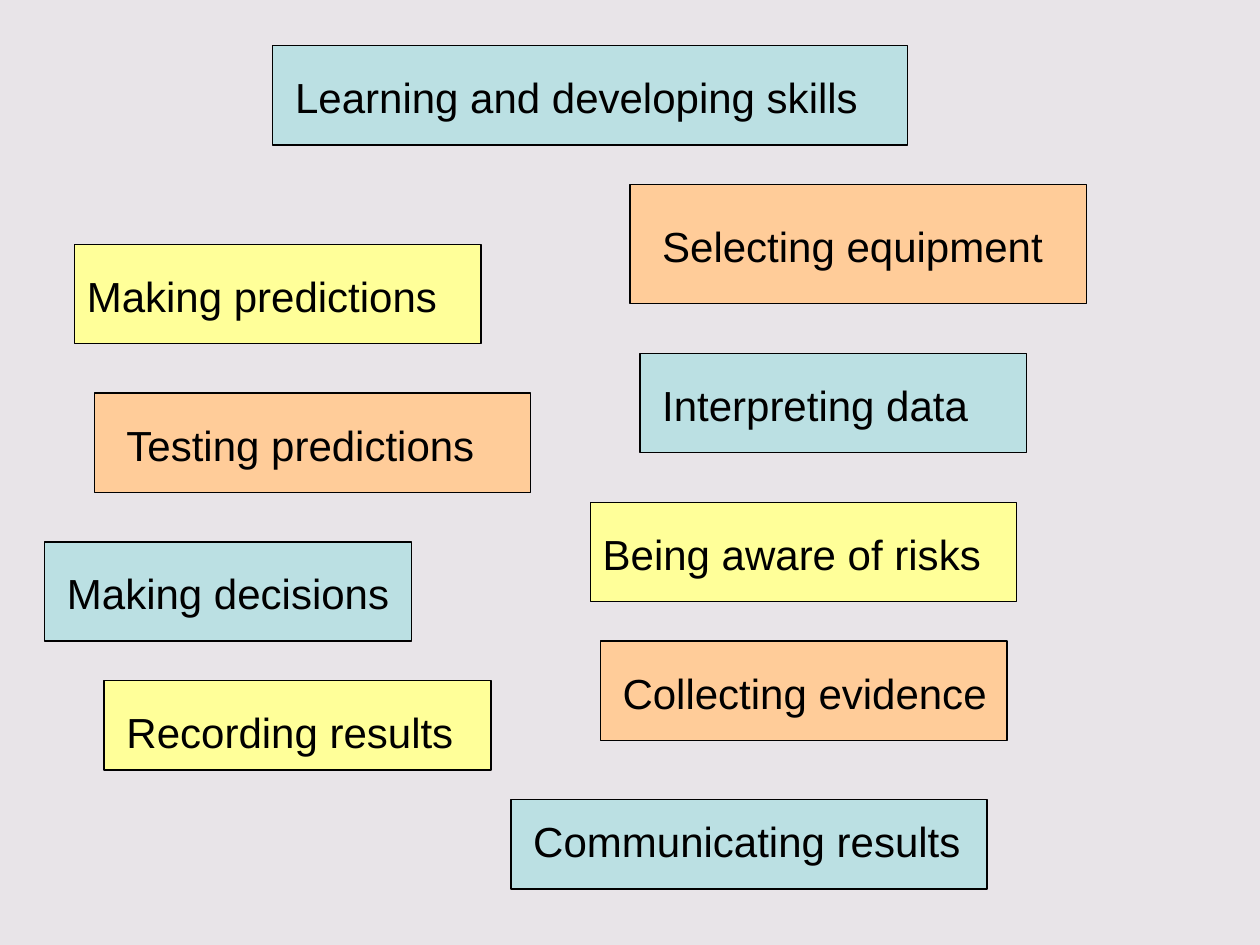
from pptx import Presentation
from pptx import util as u
from pptx.dml.color import RGBColor
from pptx.enum import shapes, text
from pptx.oxml.ns import qn
from lxml import etree


def rgb(h):
    return RGBColor.from_string(h)


prs = Presentation()
prs.slide_width, prs.slide_height = u.Inches(10), u.Inches(7.5)
s = prs.slides.add_slide(prs.slide_layouts[6])
s.background.fill.solid()
s.background.fill.fore_color.rgb = rgb("E8E4E8")

# Grid of 127 columns with square cells, offset by a small margin
CELL = prs.slide_width / 127
LEFT, TOP = u.Mm(1), u.Mm(1.25)
LABEL_ROWS = 6.35


def place(col, row, cols, rows):
    return [round(v) for v in (LEFT + col * CELL, TOP + row * CELL, cols * CELL, rows * CELL)]


YELLOW, ORANGE, BLUE = "FFFF99", "FFCC99", "BBE0E3"

# Label, fill, card (column, row, columns, rows), label (indent, drop, columns)
cards = [
    ("Making predictions", YELLOW, (7, 24, 41, 10), (0, 2, 42)),
    ("Testing predictions", ORANGE, (9, 39, 44, 10), (2, 2, 51)),
    ("Making decisions", BLUE, (4, 54, 37, 10), (1, 2, 51)),
    ("Collecting evidence", ORANGE, (60, 64, 41, 10), (1, 2, 51)),
    ("Selecting equipment", ORANGE, (63, 18, 46, 12), (2, 3, 54)),
    ("Being aware of risks", YELLOW, (59, 50, 43, 10), (0, 2, 51)),
    ("Interpreting data", BLUE, (64, 35, 39, 10), (1, 2, 51)),
    ("Recording results", YELLOW, (10, 68, 39, 9), (1, 2, 39)),
    ("Communicating results", BLUE, (51, 80, 48, 9), (1, 1, 51)),
    ("Learning and developing skills", BLUE, (27, 4, 64, 10), (1, 2, 70)),
]

for label, fill, (col, row, cols, rows), (indent, drop, label_cols) in cards:
    grp = s.shapes.add_group_shape()

    # Card
    sp = grp.shapes.add_shape(shapes.MSO_SHAPE.RECTANGLE, *place(col, row, cols, rows))
    sp.shadow.inherit = False
    sp.fill.solid()
    sp.fill.fore_color.rgb = rgb(fill)
    sp.line.color.rgb = rgb("000000")
    sp.line.width = u.Pt(0.75)

    # Label
    tb = grp.shapes.add_textbox(*place(col + indent, row + drop, label_cols, LABEL_ROWS))
    tf = tb.text_frame
    tf.word_wrap = True
    tf.auto_size = text.MSO_AUTO_SIZE.SHAPE_TO_FIT_TEXT
    p = tf.paragraphs[0]
    before = etree.SubElement(p._p.get_or_add_pPr(), qn("a:spcBef"))
    etree.SubElement(before, qn("a:spcPct")).set("val", "50000")
    r = p.add_run()
    r.text = label
    r.font.name = "Arial"
    r.font.size = u.Pt(24)
    r.font.color.rgb = rgb("000000")

prs.save("out.pptx")
